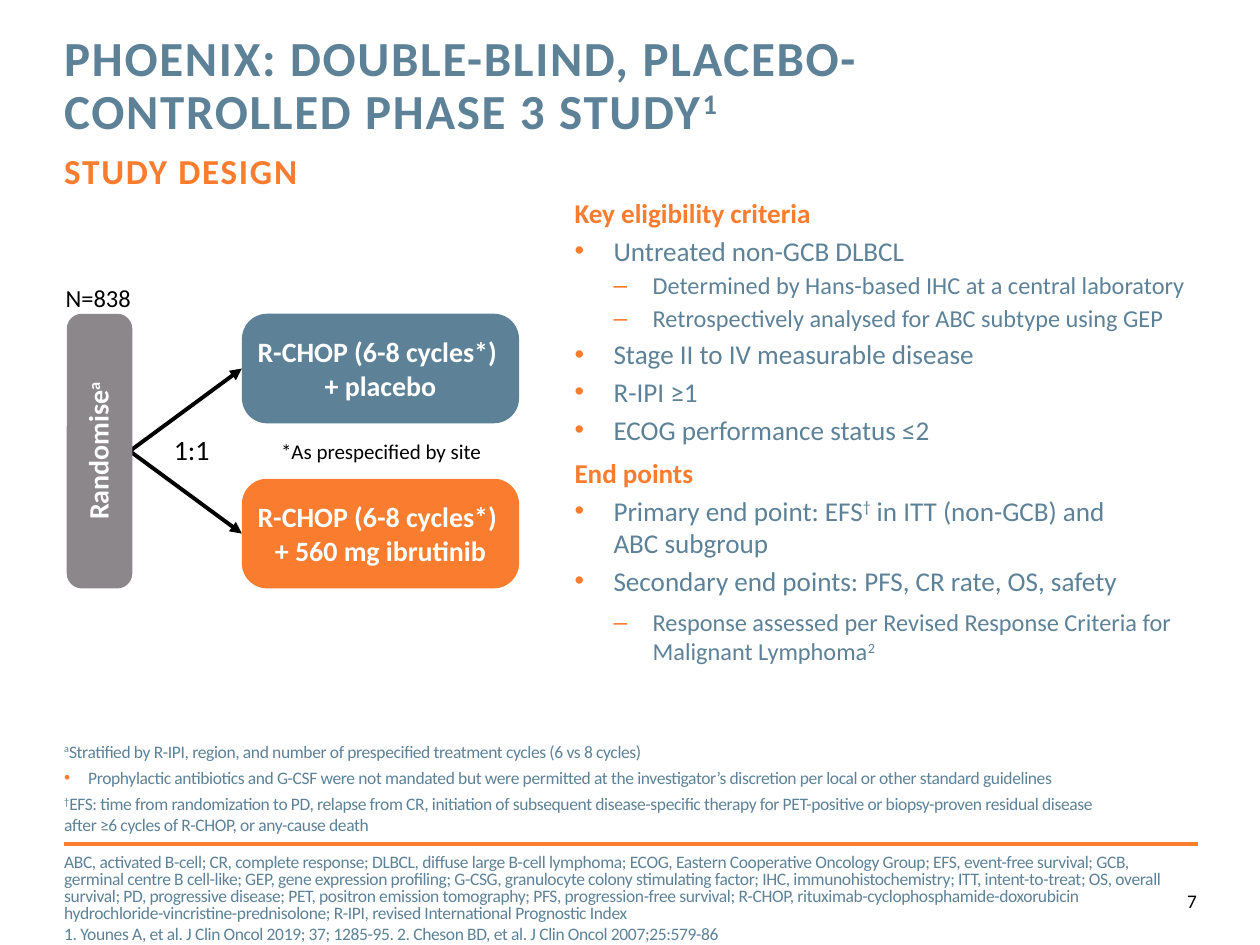
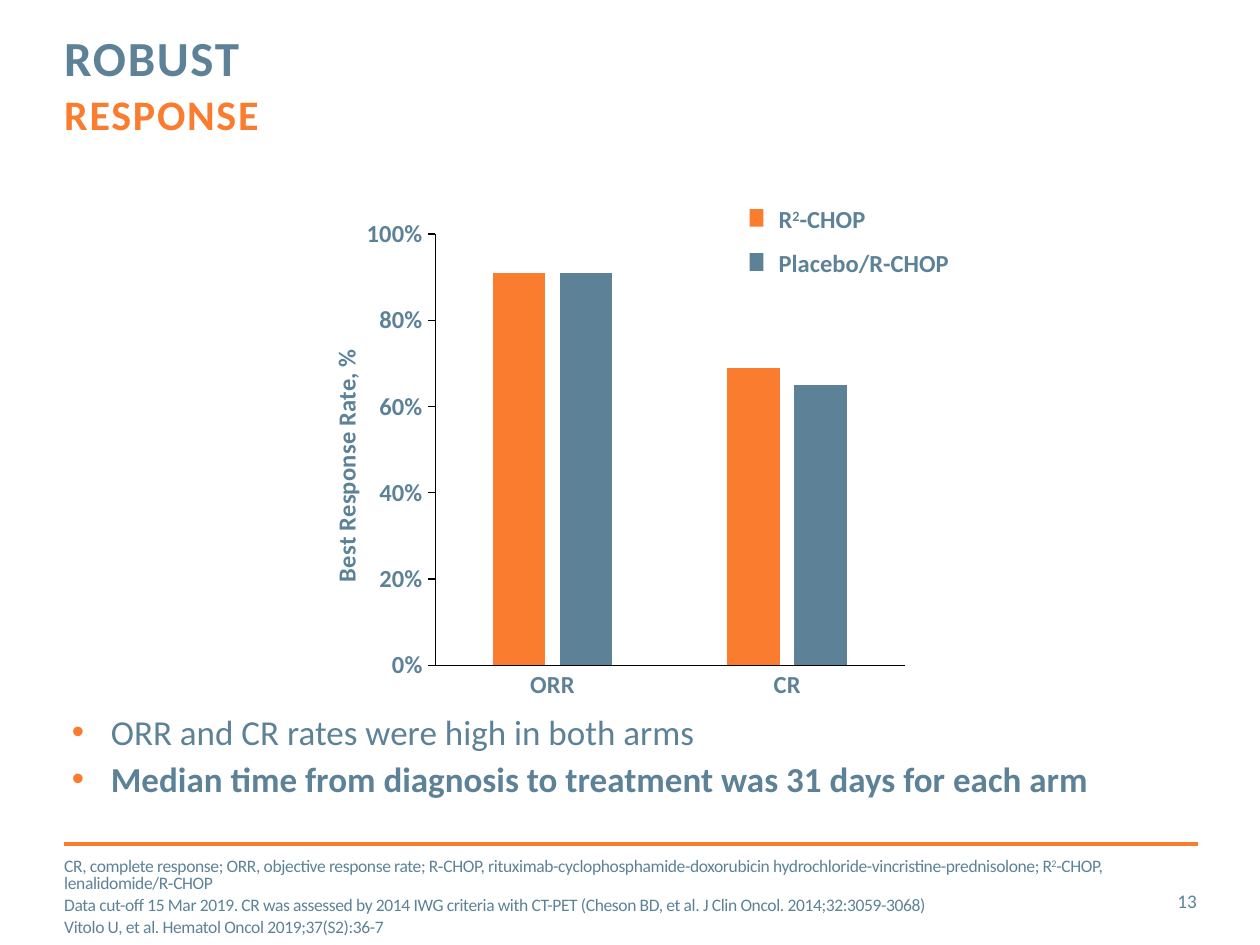
from copy import deepcopy
from dataclasses import dataclass

from lxml.etree import SubElement
from pptx import Presentation
from pptx.chart.data import CategoryChartData
from pptx.dml.color import RGBColor
from pptx.enum.chart import XL_CHART_TYPE, XL_TICK_MARK
from pptx.enum.shapes import MSO_CONNECTOR, MSO_SHAPE
from pptx.enum.text import MSO_ANCHOR, MSO_AUTO_SIZE, PP_ALIGN
from pptx.oxml.ns import qn
from pptx.util import Inches, Pt

BLUE, ORANGE, GREY = "5D8298", "FA7C2E", "8B878B"
BLACK, WHITE = "000000", "FFFFFF"
FONT = "Calibri"


def color(value):
    """Turn a hex string into a colour."""
    return RGBColor.from_string(value)


def inches(values):
    """Turn numbers into lengths."""
    return [Inches(value) for value in values]


@dataclass
class Text:
    """One paragraph; carets enclose superscripts."""
    content: str
    size: float
    color: str = BLUE
    bold: bool = False
    before: float = 0
    bullet: str = ""
    level: int = 0
    indent: float = 0.31
    align: PP_ALIGN = PP_ALIGN.LEFT
    spacing: object = 1.0
    tracking: float = 0


class Deck:
    """Holds the style and the current slide."""

    def __init__(self):
        self.presentation = Presentation()
        self.presentation.slide_width = Inches(10)
        self.presentation.slide_height = Inches(7.5)
        self.slide = None

    def start_slide(self, number, number_color):
        """Add a slide with its rule and number."""
        layout = self.presentation.slide_layouts.get_by_name("Two Content")
        self.slide = self.presentation.slides.add_slide(layout)
        self.line((0.51, 6.7), (9.51, 6.7), ORANGE, 2)
        self.text((8.86, 6.95, 0.64, 0.4),
                  [Text(number, 11, number_color, align=PP_ALIGN.RIGHT)], MSO_ANCHOR.MIDDLE)

    def fill_frame(self, text_frame, texts, anchor=MSO_ANCHOR.TOP, wrap=True, margins=(0, 0)):
        """Fill a text frame with formatted paragraphs."""
        text_frame.auto_size = MSO_AUTO_SIZE.NONE
        text_frame.word_wrap = wrap
        text_frame.vertical_anchor = anchor
        text_frame.margin_left = text_frame.margin_right = Inches(margins[0])
        text_frame.margin_top = text_frame.margin_bottom = Inches(margins[1])
        for index, text in enumerate(texts):
            paragraph = text_frame.add_paragraph() if index else text_frame.paragraphs[0]
            self.paragraph(paragraph, text)

    def paragraph(self, paragraph, text):
        """Format one paragraph and its runs."""
        properties = paragraph._p.get_or_add_pPr()
        properties.set("marL", str(Inches(text.indent * (text.level + 1)) if text.bullet else 0))
        properties.set("indent", str(-Inches(text.indent) if text.bullet else 0))
        if text.bullet:
            bullet_color = SubElement(properties, qn("a:buClr"))
            SubElement(bullet_color, qn("a:srgbClr"), val=ORANGE)
            SubElement(properties, qn("a:buFont"), typeface="Arial")
            SubElement(properties, qn("a:buChar"), char=text.bullet)
        else:
            SubElement(properties, qn("a:buNone"))
        paragraph.level = text.level
        paragraph.alignment = text.align
        paragraph.line_spacing = text.spacing
        paragraph.space_before = Pt(text.before)
        paragraph.space_after = Pt(0)
        for index, piece in enumerate(text.content.split("^")):
            for row, words in enumerate(piece.split("\n")):
                if row:
                    last_run = paragraph.runs[-1]
                    paragraph.add_line_break()
                    paragraph._p[-1].append(deepcopy(last_run._r.rPr))
                if words:
                    self.run(paragraph.add_run(), words, text, index % 2)

    def run(self, run, words, text, superscript):
        """Set the words and the look of a run."""
        run.text = words
        run.font.name = FONT
        run.font.size = Pt(text.size)
        run.font.bold = text.bold
        run.font.color.rgb = color(text.color)
        properties = run._r.get_or_add_rPr()
        if superscript:
            properties.set("baseline", "30000")
        if text.tracking:
            properties.set("spc", str(round(text.tracking * 100)))

    def placeholder(self, index, box, texts, anchor=MSO_ANCHOR.TOP):
        """Move and fill a placeholder of the template."""
        shape = self.slide.placeholders[index]
        shape.left, shape.top, shape.width, shape.height = inches(box)
        self.fill_frame(shape.text_frame, texts, anchor)
        return shape

    def title(self, width, heading, subtitle, subtitle_size):
        """Set the title with its orange subtitle."""
        text = Text(f"{heading}\n{subtitle}", 28, bold=True, spacing=Pt(30), tracking=1)
        shape = self.placeholder(0, (0.51, 0.27, width, 0.88), [text])
        font = shape.text_frame.paragraphs[0].runs[-1].font
        font.size = Pt(subtitle_size)
        font.color.rgb = color(ORANGE)

    def text(self, box, texts, anchor=MSO_ANCHOR.TOP, wrap=True, margins=(0, 0)):
        """Add a text box."""
        shape = self.slide.shapes.add_textbox(*inches(box))
        self.fill_frame(shape.text_frame, texts, anchor, wrap, margins)

    def block(self, box, fill, text=None, kind=MSO_SHAPE.ROUNDED_RECTANGLE, rotation=0):
        """Add a filled shape without outline."""
        shape = self.slide.shapes.add_shape(kind, *inches(box))
        shape.shadow.inherit = False
        shape.fill.solid()
        shape.fill.fore_color.rgb = color(fill)
        shape.line.fill.background()
        shape.rotation = rotation
        if text:
            shape.adjustments[0] = 0.23
            self.fill_frame(shape.text_frame, [text], MSO_ANCHOR.MIDDLE, margins=(0.04, 0.05))

    def line(self, start, end, line_color, width, arrow=False):
        """Add a straight line or arrow."""
        connector = self.slide.shapes.add_connector(
            MSO_CONNECTOR.STRAIGHT, *inches(start + end))
        connector.line.color.rgb = color(line_color)
        connector.line.width = Pt(width)
        if arrow:
            SubElement(connector.line._get_or_add_ln(), qn("a:tailEnd"), type="triangle")
        SubElement(connector._element.spPr, qn("a:effectLst"))

    def place_in_chart(self, element, position, **places):
        """Give a chart part a manual layout."""
        for layout in element.findall(qn("c:layout")):
            element.remove(layout)
        layout = SubElement(element, qn("c:layout"))
        element.insert(position, layout)
        manual = SubElement(layout, qn("c:manualLayout"))
        if "w" in places:
            SubElement(manual, qn("c:layoutTarget"), val="inner")
        for mode in ("xMode", "yMode"):
            SubElement(manual, qn(f"c:{mode}"), val="edge")
        for name, value in places.items():
            SubElement(manual, qn(f"c:{name}"), val=str(value))

    def column_chart(self, box, categories, series, axis_title):
        """Add a clustered column chart of percentages."""
        data = CategoryChartData(number_format="0%")
        data.categories = categories
        for name, values, _ in series:
            data.add_series(name, values)
        chart = self.slide.shapes.add_chart(
            XL_CHART_TYPE.COLUMN_CLUSTERED, *inches(box), data).chart
        chart.has_legend = False
        chart.has_title = False
        chart.font.name = FONT
        chart.font.size = Pt(14)
        chart.font.bold = True
        chart.font.color.rgb = color(BLUE)
        plot = chart.plots[0]
        plot.vary_by_categories = False
        plot.gap_width, plot.overlap = 219, -27
        for column, (_, _, fill) in zip(plot.series, series):
            column.format.fill.solid()
            column.format.fill.fore_color.rgb = color(fill)
        for axis, tick in ((chart.category_axis, XL_TICK_MARK.NONE),
                           (chart.value_axis, XL_TICK_MARK.OUTSIDE)):
            axis.has_major_gridlines = False
            axis.major_tick_mark = tick
            axis.minor_tick_mark = XL_TICK_MARK.NONE
            axis.format.line.color.rgb = color(BLACK)
            axis.format.line.width = Pt(0.75)
        value_axis = chart.value_axis
        value_axis.minimum_scale, value_axis.maximum_scale = 0, 1
        value_axis.major_unit = 0.2
        value_axis.tick_labels.number_format = "0%"
        value_axis.tick_labels.number_format_is_linked = False
        title = value_axis.axis_title
        paragraph = title.text_frame.paragraphs[0]
        paragraph.text = axis_title
        self.run(paragraph.runs[0], axis_title, Text(axis_title, 14, bold=True), False)
        self.place_in_chart(title._element, 1, x=0.14, y=0.27)
        plot_area = chart._chartSpace.chart.plotArea
        self.place_in_chart(plot_area, 0, x=0.3, y=0.05, w=0.68, h=0.86)


def heading(content, before=6):
    """Make an orange list heading."""
    return Text(content, 15.5, ORANGE, True, before)


def item(content, size=15.5, bold=False, before=3):
    """Make a first-level list item."""
    return Text(content, size, bold=bold, before=before, bullet="•")


def subitem(content, before=2):
    """Make a second-level list item."""
    return Text(content, 13.9, before=before, bullet="–", level=1)


def note(content, before=0, **style):
    """Make a small tight note."""
    return Text(content, 10, before=before, tracking=-0.2, **style)


def label(content, size, align=PP_ALIGN.LEFT):
    """Make a plain black label."""
    return Text(content, size, BLACK, align=align)


def build_design_slide(deck):
    """Build the study design slide."""
    deck.start_slide("7", BLACK)
    deck.title(6.58, "PHOENIX: DOUBLE-BLIND, PLACEBO-CONTROLLED PHASE 3 STUDY^1^",
               "STUDY DESIGN", 20)
    deck.placeholder(1, (4.56, 1.56, 4.94, 4.38), [
        heading("Key eligibility criteria", 0),
        item("Untreated non-GCB DLBCL"),
        subitem("Determined by Hans-based IHC at a central laboratory"),
        subitem("Retrospectively analysed for ABC subtype using GEP"),
        item("Stage II to IV measurable disease"),
        item("R-IPI ≥1"),
        item("ECOG performance status ≤2"),
        heading("End points"),
        item("Primary end point: EFS^†^ in ITT (non-GCB) and \nABC subgroup"),
        item("Secondary end points: PFS, CR rate, OS, safety"),
        subitem("Response assessed per Revised Response Criteria for Malignant Lymphoma^2^", 6)])
    deck.placeholder(2, (0.51, 6.78, 8.75, 0.72), [
        note("ABC, activated B-cell; CR, complete response; DLBCL, diffuse large B-cell lymphoma; "
             "ECOG, Eastern Cooperative Oncology Group; EFS, event-free survival; "
             "GCB, germinal centre B cell-like; GEP, gene expression profiling; G-CSG, granulocyte "
             "colony stimulating factor; IHC, immunohistochemistry; ITT, intent-to-treat; "
             "OS, overall survival; PD, progressive disease; PET, positron emission tomography; "
             "PFS, progression-free survival; R-CHOP, rituximab-cyclophosphamide-doxorubicin "
             "hydrochloride-vincristine-prednisolone; R-IPI, revised International Prognostic Index",
             spacing=0.8),
        note("1. Younes A, et al. J Clin Oncol 2019; 37; 1285-95. "
             "2. Cheson BD, et al. J Clin Oncol 2007;25:579-86")], MSO_ANCHOR.MIDDLE)
    deck.text((0.51, 5.87, 8.35, 0.76), [
        note("^a^Stratified by R-IPI, region, and number of prespecified treatment cycles "
             "(6 vs 8 cycles)"),
        note("Prophylactic antibiotics and G-CSF were not mandated but were permitted at the "
             "investigator’s discretion per local or other standard guidelines",
             3, bullet="•", indent=0.19),
        note("^†^EFS: time from randomization to PD, relapse from CR, initiation of subsequent "
             "disease-specific therapy for PET-positive or biopsy-proven residual disease after "
             "≥6 cycles of R-CHOP, or any-cause death", 3)], MSO_ANCHOR.BOTTOM)
    deck.text((0.52, 2.25, 0.52, 0.24), [label("N=838", 14)], wrap=False)
    deck.text((1.38, 3.43, 0.29, 0.27), [label("1:1", 16)], wrap=False)
    deck.text((2.22, 3.48, 1.61, 0.2),
              [label("*As prespecified by site", 12, PP_ALIGN.CENTER)], wrap=False)
    arm_height = 0.87
    for top, fill, treatment in ((2.49, BLUE, "placebo"), (3.8, ORANGE, "560 mg ibrutinib")):
        deck.line((1.03, 3.58), (1.92, top + arm_height / 2), BLACK, 2.25, arrow=True)
        deck.block((1.92, top, 2.2, arm_height), fill,
                   Text(f"R-CHOP (6-8 cycles*) \n+ {treatment}", 16, WHITE, True,
                        align=PP_ALIGN.CENTER))
    deck.block((-0.3, 3.32, 2.18, 0.52), GREY,
               Text("Randomise^a^", 16, WHITE, True, align=PP_ALIGN.CENTER, spacing=0.9),
               rotation=270)


def build_response_slide(deck):
    """Build the response slide."""
    deck.start_slide("13", BLUE)
    deck.title(7.17, "ROBUST ", "RESPONSE", 24)
    deck.placeholder(1, (0.57, 5.64, 8.93, 0.87), [
        item("ORR and CR rates were high in both arms", 20, before=0),
        item("Median time from diagnosis to treatment was 31 days for each arm", 20, True)])
    deck.placeholder(2, (0.51, 6.76, 9.04, 0.74), [
        note("CR, complete response; ORR, objective response rate; R‑CHOP, "
             "rituximab-cyclophosphamide-doxorubicin hydrochloride-vincristine-prednisolone; "
             "R^2^-CHOP, lenalidomide/R‑CHOP", spacing=0.8),
        note("Data cut-off 15 Mar 2019. CR was assessed by 2014 IWG criteria with CT-PET "
             "(Cheson BD, et al. J Clin Oncol. 2014;32:3059-3068)", 3, spacing=0.8),
        note("Vitolo U, et al. Hematol Oncol 2019;37(S2):36-7", 3, spacing=0.8)],
        MSO_ANCHOR.MIDDLE)
    deck.column_chart((1.81, 1.66, 5.48, 3.98), ["ORR", "CR"],
                      [("Series 1", (0.91, 0.69), ORANGE), ("Series 2", (0.91, 0.65), BLUE)],
                      "Best Response Rate, %")
    for row, (name, fill, width) in enumerate((("R^2^-CHOP", ORANGE, 0.97),
                                               ("Placebo/R-CHOP", BLUE, 1.63))):
        top = 1.55 + 0.35 * row
        deck.block((5.95, top + 0.11, 0.11, 0.14), fill, kind=MSO_SHAPE.RECTANGLE)
        deck.text((6.05, top, width, 0.37), [Text(name, 14, bold=True)],
                  wrap=False, margins=(0.13, 0.07))


def main():
    """Build and save the slides."""
    deck = Deck()
    build_design_slide(deck)
    build_response_slide(deck)
    deck.presentation.save("out.pptx")


if __name__ == "__main__":
    main()
